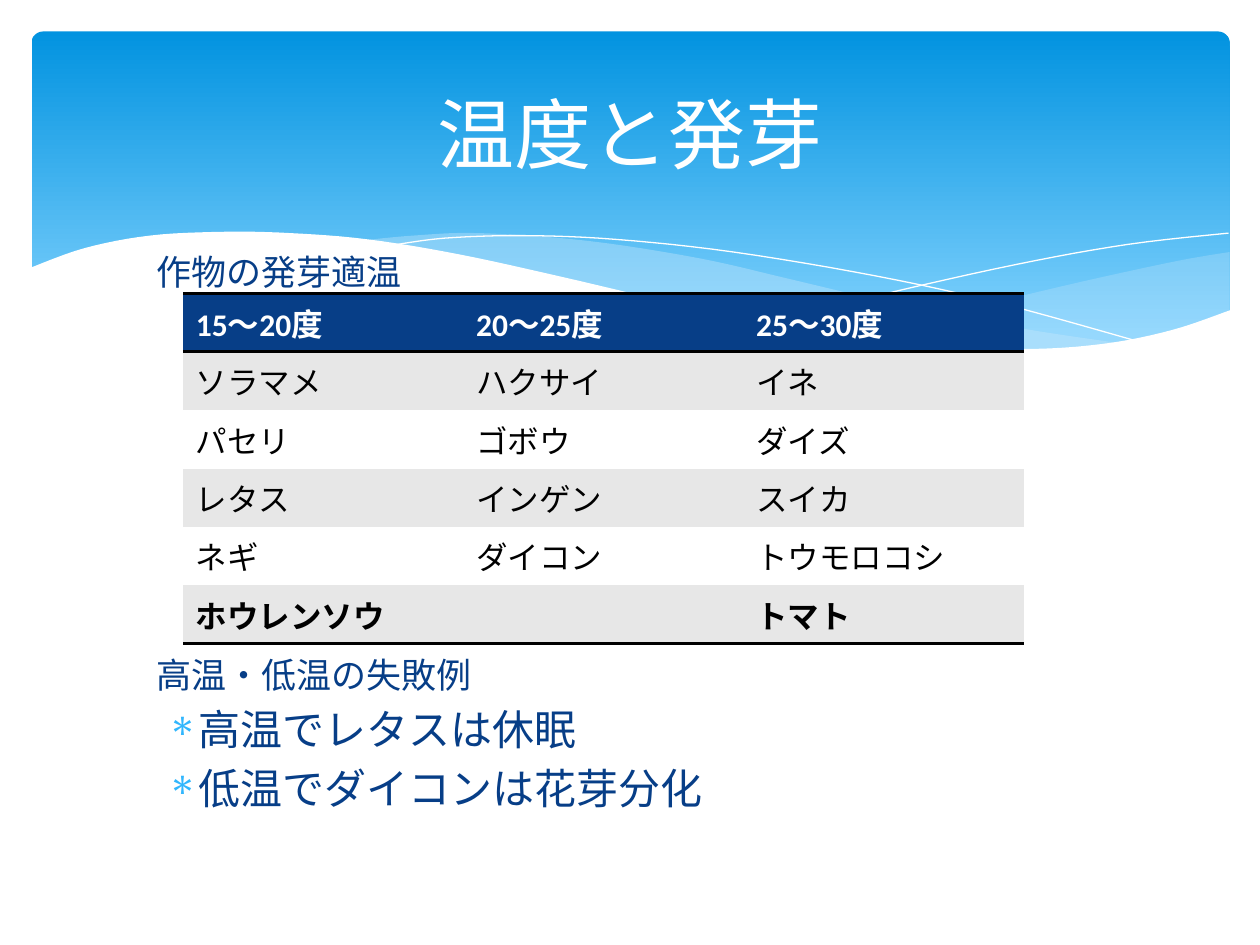
import pptx
import pptx.dml.color
import pptx.enum.shapes
import pptx.enum.text
import pptx.oxml
import pptx.oxml.ns
import pptx.util
from lxml import etree

Inches, Pt = pptx.util.Inches, pptx.util.Pt
RGBColor = pptx.dml.color.RGBColor
qn = pptx.oxml.ns.qn

WHITE = RGBColor(0xFF, 0xFF, 0xFF)
BLACK = RGBColor(0, 0, 0)
NAVY = RGBColor(0x07, 0x3E, 0x87)
GREY = RGBColor(0xE7, 0xE7, 0xE7)
SKY_TOP = RGBColor(0x02, 0x93, 0xE0)
SKY_BOTTOM = RGBColor(0x83, 0xD3, 0xFE)
PALE = RGBColor(0xC6, 0xE7, 0xFC)
BULLET = RGBColor(0x31, 0xB6, 0xFD)
FONT = "Calibri"
NO_STYLE = "{2D5ABB26-0587-4C30-8999-92F81FD0307C}"

TITLE = "温度と発芽"
# text, size, space before in points, bulleted
BODY = [
    ("作物の発芽適温", 20, 0, False),
    ("高温・低温の失敗例", 20, 206, False),
    ("高温でレタスは休眠", 24, 4.8, True),
    ("低温でダイコンは花芽分化", 24, 4.8, True),
]
ROWS = [
    ("15～20度", "20～25度", "25～30度"),
    ("ソラマメ", "ハクサイ", "イネ"),
    ("パセリ", "ゴボウ", "ダイズ"),
    ("レタス", "インゲン", "スイカ"),
    ("ネギ", "ダイコン", "トウモロコシ"),
    ("ホウレンソウ", "", "トマト"),
]

# Each wave: smooth edges through anchor points, fill, opacity in percent
WAVES = [
    ([[(9.76, 2), (9.35, 2.07), (8.61, 2.23), (7.53, 2.48), (6.61, 2.65)],
      [(6.61, 2.65), (7.32, 2.74), (8.03, 2.78), (8.72, 2.74), (9.28, 2.63), (9.76, 2.47)]],
     PALE, 29),
    ([[(8.93, 2.73), (8.07, 2.6), (7.06, 2.4), (6.29, 2.22), (5.55, 2.05),
       (4.65, 1.91), (3.8, 1.85), (3.28, 1.87), (2.86, 1.91)],
      [(2.86, 1.91), (3.62, 2.03), (4.49, 2.22), (5.3, 2.4), (6.18, 2.58),
       (6.95, 2.7), (7.61, 2.77), (8.18, 2.78), (8.93, 2.73)]],
     PALE, 40),
    ([[(3.09, 1.95), (3.53, 1.89), (4.16, 1.87), (4.89, 1.9), (5.82, 2),
       (6.95, 2.19), (7.95, 2.41), (9.07, 2.72)]], None, None),
    ([[(6.13, 2.57), (6.95, 2.35), (8.06, 2.1), (8.95, 1.94), (9.75, 1.85)]], None, None),
    ([[(9.77, 2.46), (9.3, 2.62), (8.75, 2.73), (8.09, 2.77), (7.26, 2.72),
       (6.26, 2.58), (5.29, 2.39), (4.47, 2.2), (3.65, 2.02), (2.92, 1.9),
       (2.3, 1.85), (1.77, 1.84), (1.19, 1.87), (0.67, 1.97), (0.23, 2.13)],
      [(0.23, 3.29), (9.77, 3.29)]],
     WHITE, 100),
]


def smooth(anchors, steps=6):
    """Return points on the Catmull-Rom curve through the anchors."""
    if len(anchors) < 3:
        return anchors
    padded = [anchors[0], *anchors, anchors[-1]]
    points = [anchors[0]]
    for a, b, c, d in zip(padded, padded[1:], padded[2:], padded[3:]):
        for step in range(1, steps + 1):
            t = step / steps
            points.append(tuple(
                (2 * q + (r - p) * t + (2 * p - 5 * q + 4 * r - s) * t ** 2
                 + (3 * q - p - 3 * r + s) * t ** 3) / 2
                for p, q, r, s in zip(a, b, c, d)))
    return points


def add_wave(page, edges, color, opacity):
    points = [(Inches(x), Inches(y)) for edge in edges for x, y in smooth(edge)]
    builder = page.shapes.build_freeform(*points[0])
    builder.add_line_segments(points[1:], close=color is not None)
    wave = builder.convert_to_shape()
    wave.shadow.inherit = False
    if color is None:
        wave.fill.background()
        wave.line.color.rgb = WHITE
        wave.line.width = Pt(0)
        return
    wave.line.fill.background()
    wave.fill.solid()
    wave.fill.fore_color.rgb = color
    if opacity < 100:
        tint = wave._element.spPr.find(".//" + qn("a:srgbClr"))
        etree.SubElement(tint, qn("a:alpha")).set("val", str(opacity * 1000))


def add_sky(page):
    sky = page.shapes.add_shape(pptx.enum.shapes.MSO_SHAPE.ROUNDED_RECTANGLE,
                                Inches(0.25), Inches(0.25), Inches(9.51), Inches(2.7))
    sky.adjustments[0] = 0.034
    sky.shadow.inherit = False
    sky.line.fill.background()
    sky.fill.gradient()
    sky.fill.gradient_angle = 270
    for stop, color, position in zip(sky.fill.gradient_stops, (SKY_TOP, SKY_BOTTOM), (0, 0.9)):
        stop.color.rgb = color
        stop.position = position


def style(paragraph, size, color, bold=False):
    for span in paragraph.runs:
        span.font.name = FONT
        span.font.size = Pt(size)
        span.font.color.rgb = color
        span.font.bold = bold


def add_bullet(paragraph):
    properties = paragraph._p.get_or_add_pPr()
    properties.set("marL", str(Inches(0.34)))
    properties.set("indent", str(-Inches(0.25)))
    color = etree.SubElement(properties, qn("a:buClr"))
    etree.SubElement(color, qn("a:srgbClr")).set("val", str(BULLET))
    etree.SubElement(properties, qn("a:buFont")).set("typeface", "Symbol")
    etree.SubElement(properties, qn("a:buChar")).set("char", "∗")


def add_title(page):
    box = page.shapes.add_textbox(Inches(0.5), Inches(0.37), Inches(9), Inches(1.37))
    frame = box.text_frame
    frame.word_wrap = True
    frame.vertical_anchor = pptx.enum.text.MSO_ANCHOR.MIDDLE
    frame.text = TITLE
    frame.paragraphs[0].alignment = pptx.enum.text.PP_ALIGN.CENTER
    style(frame.paragraphs[0], 44, WHITE)


def add_body(page):
    box = page.shapes.add_textbox(Inches(1.14), Inches(1.94), Inches(7.79), Inches(5.28))
    frame = box.text_frame
    frame.word_wrap = True
    frame.text = "\n".join(line[0] for line in BODY)
    for paragraph, (_, size, before, bulleted) in zip(frame.paragraphs, BODY):
        paragraph.space_before = Pt(before)
        style(paragraph, size, NAVY)
        if bulleted:
            add_bullet(paragraph)


def add_rule(cell, side):
    """Draw a 2 pt black border on one side, placed before the cell's fill."""
    properties = cell._tc.get_or_add_tcPr()
    border = etree.Element(qn("a:" + side), w=str(Pt(2)))
    fill = etree.SubElement(border, qn("a:solidFill"))
    etree.SubElement(fill, qn("a:srgbClr")).set("val", str(BLACK))
    properties.insert(len(properties) - 1, border)


def add_crop_table(page):
    last = len(ROWS) - 1
    table = page.shapes.add_table(len(ROWS), 3, Inches(1.455), Inches(2.33),
                                  Inches(6.67), Inches(2.78)).table
    table._tbl.tblPr.find(qn("a:tableStyleId")).text = NO_STYLE
    for i, row in enumerate(ROWS):
        for j, text in enumerate(row):
            cell = table.cell(i, j)
            cell.text = text
            style(cell.text_frame.paragraphs[0], 18, WHITE if i == 0 else BLACK, i in (0, last))
            cell.fill.solid()
            cell.fill.fore_color.rgb = NAVY if i == 0 else (WHITE, GREY)[i % 2]
            if i == 0:
                add_rule(cell, "lnT")
            if i in (0, last):
                add_rule(cell, "lnB")
            if not text:
                cell.text_frame.paragraphs[0].font.size = Pt(18)


def main():
    deck = pptx.Presentation()
    deck.slide_width, deck.slide_height = Inches(10), Inches(7.5)
    page = deck.slides.add_slide(deck.slide_layouts[6])
    add_sky(page)
    for wave in WAVES:
        add_wave(page, *wave)
    add_body(page)
    add_title(page)
    add_crop_table(page)
    deck.save("out.pptx")


if __name__ == "__main__":
    main()
